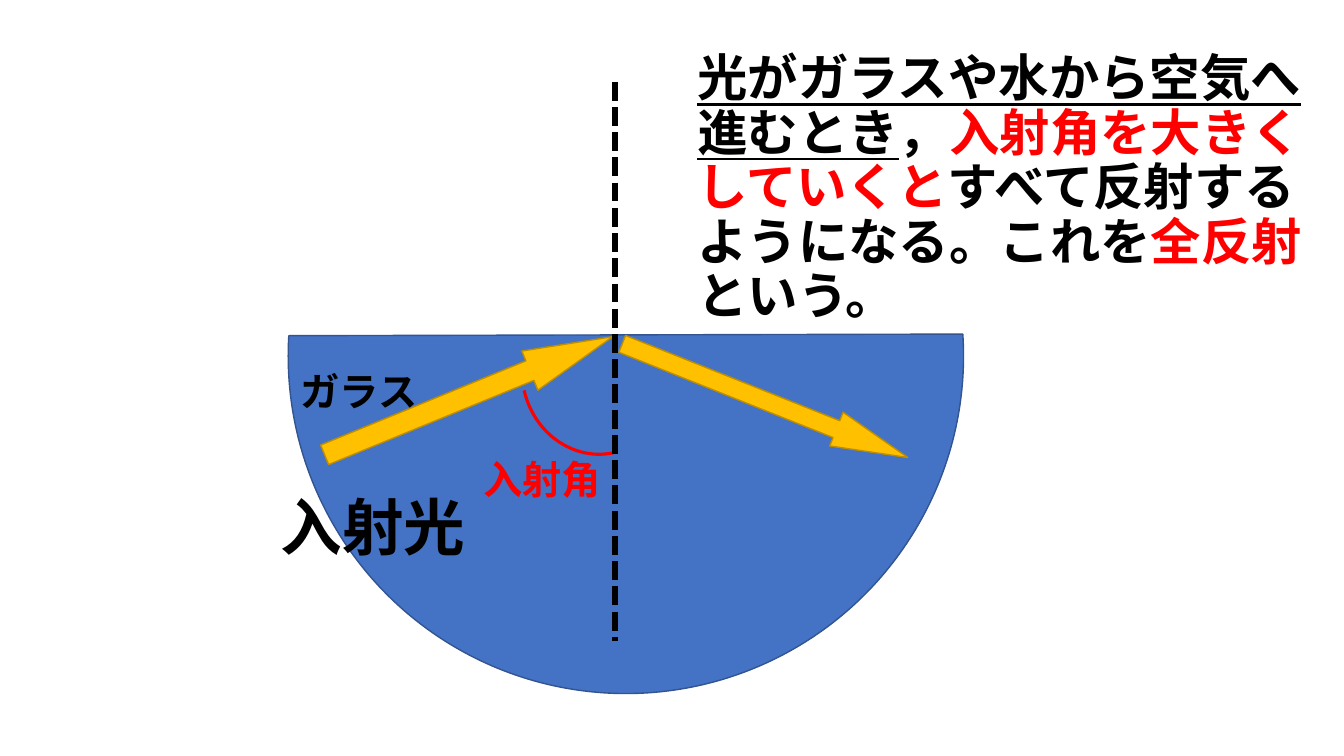
from dataclasses import dataclass

from lxml import etree
from pptx import Presentation
from pptx import util as u
from pptx.enum import dml, shapes, text
from pptx.dml.color import RGBColor
from pptx.oxml import ns

INK = {
    "glass": "4472C4", "rim": "325491",
    "ray": "FFC000", "edge": "BD8E00",
    "black": "000000", "red": "FF0000",
}
FACE = "Noto Sans CJK JP"
KIND = shapes.MSO_SHAPE
TURN = 0.6  # adjustment units per degree


@dataclass
class Part:
    kind: KIND
    box: tuple[float, float, float, float]
    spin: float
    fill: str | None
    line: str
    width: float
    adjust: tuple[float, ...] = ()


@dataclass
class Run:
    words: str
    ink: str = "black"
    under: bool = False


@dataclass
class Label:
    box: tuple[float, float, float, float]
    size: float
    runs: list[Run]
    align: text.PP_ALIGN = text.PP_ALIGN.LEFT
    wrap: bool = True
    space: float | None = 0.9
    before: float = 10


def tint(name: str) -> RGBColor:
    return RGBColor.from_string(INK[name])


def draw_part(slide, part: Part) -> None:
    shape = slide.shapes.add_shape(part.kind, *map(u.Pt, part.box))
    shape.rotation = part.spin
    shape.shadow.inherit = False
    for i, value in enumerate(part.adjust):
        shape.adjustments[i] = value
    if part.fill:
        shape.fill.solid()
        shape.fill.fore_color.rgb = tint(part.fill)
    else:
        shape.fill.background()
    shape.line.color.rgb = tint(part.line)
    shape.line.width = u.Pt(part.width)


def draw_normal(slide, x: float, top: float, end: float) -> None:
    line = slide.shapes.add_connector(
        shapes.MSO_CONNECTOR.STRAIGHT, u.Pt(x), u.Pt(top), u.Pt(x), u.Pt(end))
    line.line.color.rgb = tint("black")
    line.line.width = u.Pt(4.5)
    line.line.dash_style = dml.MSO_LINE.SQUARE_DOT
    etree.SubElement(line.element.spPr, ns.qn("a:effectLst"))


def draw_label(slide, label: Label) -> None:
    frame = slide.shapes.add_textbox(*map(u.Pt, label.box)).text_frame
    frame.word_wrap = label.wrap
    para = frame.paragraphs[0]
    para.alignment = label.align
    para.line_spacing = label.space
    para.space_before = u.Pt(label.before)
    for item in label.runs:
        run = para.add_run()
        run.text = item.words
        font = run.font
        font.name, font.size, font.bold = FACE, u.Pt(label.size), True
        font.underline = item.under
        font.color.rgb = tint(item.ink)
        # East Asian typeface
        etree.SubElement(run.font._element, ns.qn("a:ea"), typeface=FACE)


PARTS = [
    # Half disc of glass, cut from 45 to 232 degrees before its spin
    Part(KIND.CHORD, (205.9, 13, 482.4, 482.4), 311.3, "glass", "rim", 1,
         (45 * TURN, 232.12 * TURN)),
    # Incoming and reflected rays
    Part(KIND.DOWN_ARROW, (319.7, 171.4, 30.2, 222.5), 247.7, "ray", "edge", 1,
         (0.5, 2.12)),
    Part(KIND.DOWN_ARROW, (533.5, 176.4, 25.9, 219.6), 291.7, "ray", "edge", 1,
         (0.5, 2.12)),
    # Angle mark
    Part(KIND.ARC, (373, 209.5, 105.8, 115.2), 167.2, None, "red", 2.25),
]

LABELS = [
    Label((179.3, 262.8, 154.1, 41), 28, [Run("ガラス")], text.PP_ALIGN.CENTER),
    Label((189.4, 351.4, 154.1, 41), 44, [Run("入射光")], text.PP_ALIGN.CENTER),
    Label((338.4, 321.8, 99.4, 41), 28, [Run("入射角", "red")],
          wrap=False, space=None, before=0),
    Label((491, 34.6, 465.8, 41), 36, [
        Run("光がガラスや水から空気へ進むとき", under=True),
        Run("，"),
        Run("入射角を大きくしていくと", "red"),
        Run("すべて反射するようになる。これを"),
        Run("全反射", "red"),
        Run("という。"),
    ]),
]


def main() -> None:
    deck = Presentation()
    deck.slide_width, deck.slide_height = u.Pt(960), u.Pt(540)
    slide = deck.slides.add_slide(deck.slide_layouts[6])
    for part in PARTS:
        draw_part(slide, part)
    draw_normal(slide, 439.2, 58.3, 457.9)
    for label in LABELS:
        draw_label(slide, label)
    deck.save("out.pptx")


if __name__ == "__main__":
    main()
